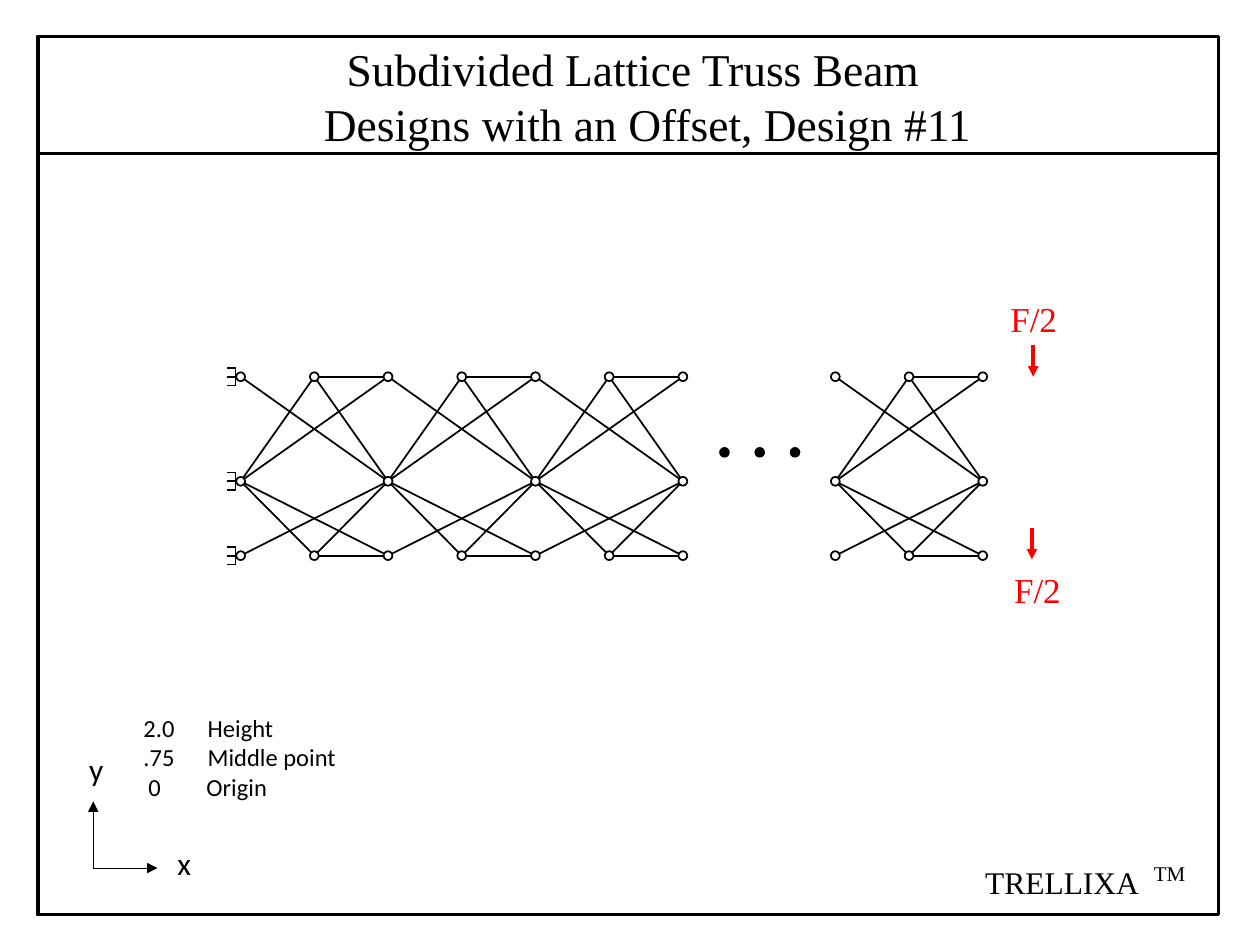
from pptx import Presentation
from pptx.dml.color import RGBColor
from pptx.enum.shapes import MSO_CONNECTOR as Conn, MSO_SHAPE as Shape
from pptx.enum.text import MSO_ANCHOR as Anchor, PP_ALIGN as Align
from pptx.oxml.ns import qn
from pptx.util import Inches, Pt
from lxml.etree import SubElement

BLACK, WHITE, RED = "000000", "FFFFFF", "FF0000"
SERIF, SANS = "Times New Roman", "Calibri"

# Truss geometry: half-bay pitch, chord heights, left edge of each bay
HALF = 0.585
LEVELS = {"top": 2.99, "mid": 3.82, "low": 4.41}
WALL = 1.91
BAYS = [WALL + 2 * HALF * i for i in range(3)] + [6.63]

# Nodes and members of one bay, as (half-bay index, level)
BAY_NODES = [(i, level) for level in ("top", "low") for i in range(3)]
BAY_NODES += [(0, "mid"), (2, "mid")]
BAY_MEMBERS = [pair for chord in ("top", "low") for pair in (
    ((0, chord), (2, "mid")),
    ((0, "mid"), (2, chord)),
    ((0, "mid"), (1, chord)),
    ((1, chord), (2, "mid")),
    ((1, chord), (2, chord)),
)]


def color(value):
    return RGBColor.from_string(value)


def set_line(sp, hex_color, width):
    sp.line.color.rgb = color(hex_color)
    sp.line.width = Pt(width)


def add_line(shapes, start, end, hex_color=BLACK, width=1, arrow=False):
    points = [Inches(v) for v in (*start, *end)]
    c = shapes.add_connector(Conn.STRAIGHT, *points)
    set_line(c, hex_color, width)
    if arrow:
        SubElement(c.line._get_or_add_ln(), qn("a:tailEnd"), type="triangle")
    SubElement(c._element.spPr, qn("a:effectLst"))
    return c


def add_dot(shapes, x, y, fill=WHITE):
    size = 0.07
    sp = shapes.add_shape(Shape.OVAL, Inches(x - size / 2), Inches(y - size / 2),
                          Inches(size), Inches(size))
    sp.shadow.inherit = False
    sp.fill.solid()
    sp.fill.fore_color.rgb = color(fill)
    set_line(sp, BLACK, 1)
    return sp


def format_run(r, font, size, hex_color=BLACK):
    for key, value in {"name": font, "size": Pt(size), "bold": False}.items():
        setattr(r.font, key, value)
    r.font.color.rgb = color(hex_color)


def add_text(shapes, box, lines, font, size, hex_color=BLACK):
    sp = shapes.add_textbox(*[Inches(v) for v in box])
    tf = sp.text_frame
    tf.word_wrap = True
    for i, line in enumerate(lines):
        p = tf.paragraphs[0] if i == 0 else tf.add_paragraph()
        r = p.add_run()
        r.text = line
        format_run(r, font, size, hex_color)
    return sp


def add_title(slide):
    title = slide.shapes.title
    box = {"left": 2.47, "top": 0.27, "width": 5.46, "height": 0.98}
    for key, value in box.items():
        setattr(title, key, Inches(value))
    tf = title.text_frame
    tf.word_wrap = True
    tf.vertical_anchor = Anchor.MIDDLE
    p = tf.paragraphs[0]
    p.alignment = Align.LEFT
    p._p.get_or_add_pPr().set("indent", str(Inches(0.18)))
    r = p.add_run()
    r.text = "Subdivided Lattice Truss Beam Designs with an Offset, Design #11"
    format_run(r, SERIF, 26)


def add_frame(shapes):
    sp = shapes.add_shape(Shape.RECTANGLE, *[Inches(v) for v in (0.3, 0.29, 9.37, 6.97)])
    sp.shadow.inherit = False
    sp.fill.background()
    set_line(sp, BLACK, 2)
    add_line(shapes, (0.3, 1.22), (9.67, 1.22), width=2)


def add_support(shapes, y):
    group = shapes.add_group_shape().shapes
    x, reach = WALL - 0.04, 0.07
    add_line(group, (x, y - reach), (x, y + reach))
    for dy in (-reach, 0, reach):
        add_line(group, (x - reach, y + dy), (x, y + dy))


def add_truss(shapes):
    nodes = set()
    for left in BAYS:
        def at(node):
            return round(left + node[0] * HALF, 3), LEVELS[node[1]]

        for a, b in BAY_MEMBERS:
            add_line(shapes, at(a), at(b))
        nodes.update(at(node) for node in BAY_NODES)
    for y in LEVELS.values():
        add_support(shapes, y)
    # Nodes cover the member ends
    for x, y in sorted(nodes):
        add_dot(shapes, x, y)
    # Dots standing for the omitted bays
    for i in range(3):
        add_dot(shapes, 5.75 + 0.28 * i, 3.59, BLACK)


def add_loads(shapes):
    for x, y, label_x, label_y in ((8.2, 2.74, 7.92, 2.31), (8.19, 4.19, 7.95, 4.46)):
        add_line(shapes, (x, y), (x, y + 0.25), RED, 2, arrow=True)
        add_text(shapes, (label_x, label_y, 0.7, 0.44), ["F/2"], SERIF, 20, RED)


def add_axes(shapes):
    group = shapes.add_group_shape().shapes
    origin = (0.74, 6.89)
    for label, tip, corner in (("x", (1.25, 6.89), (1.31, 6.65)),
                               ("y", (0.74, 6.36), (0.61, 5.9))):
        add_line(group, origin, tip, width=0.5, arrow=True)
        add_text(group, (*corner, 0.31, 0.4), [label], SANS, 18)


def add_legend(shapes):
    lines = ["2.0\tHeight", ".75\tMiddle point", "0\tOrigin"]
    sp = add_text(shapes, (1.04, 5.61, 1.84, 0.81), lines, SANS, 14)
    for p in sp.text_frame.paragraphs:
        tabs = SubElement(p._p.get_or_add_pPr(), qn("a:tabLst"))
        SubElement(tabs, qn("a:tab"), pos=str(Inches(0.51)), algn="l")
    p._p.get_or_add_pPr().set("indent", str(Inches(0.04)))


def add_mark(shapes):
    group = shapes.add_group_shape().shapes
    add_text(group, (7.72, 6.8, 1.52, 0.4), ["TRELLIXA"], SERIF, 18)
    add_text(group, (9.06, 6.78, 0.51, 0.3), ["TM"], SERIF, 12)


def main():
    prs = Presentation()
    prs.slide_width, prs.slide_height = Inches(10), Inches(7.5)
    slide = prs.slides.add_slide(prs.slide_layouts[5])
    add_title(slide)
    for draw in (add_frame, add_truss, add_loads, add_axes, add_legend, add_mark):
        draw(slide.shapes)
    prs.save("out.pptx")


if __name__ == "__main__":
    main()
